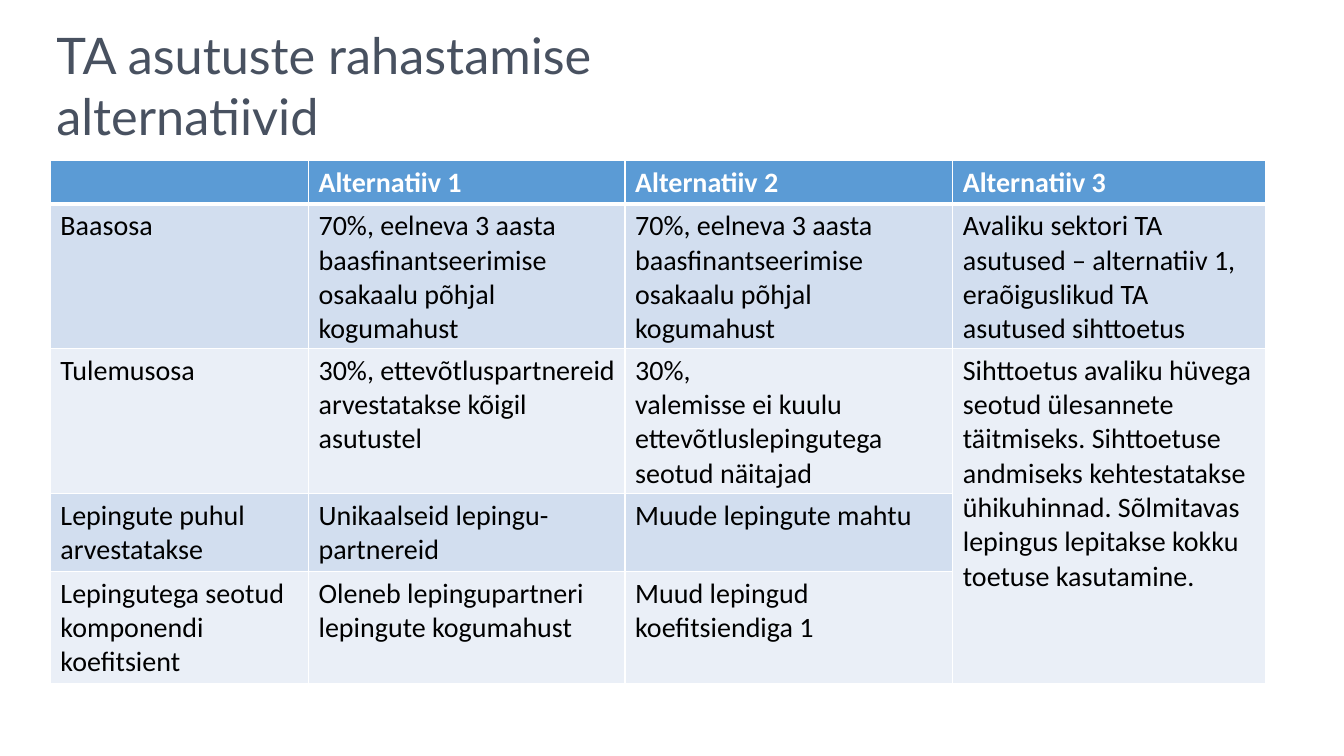
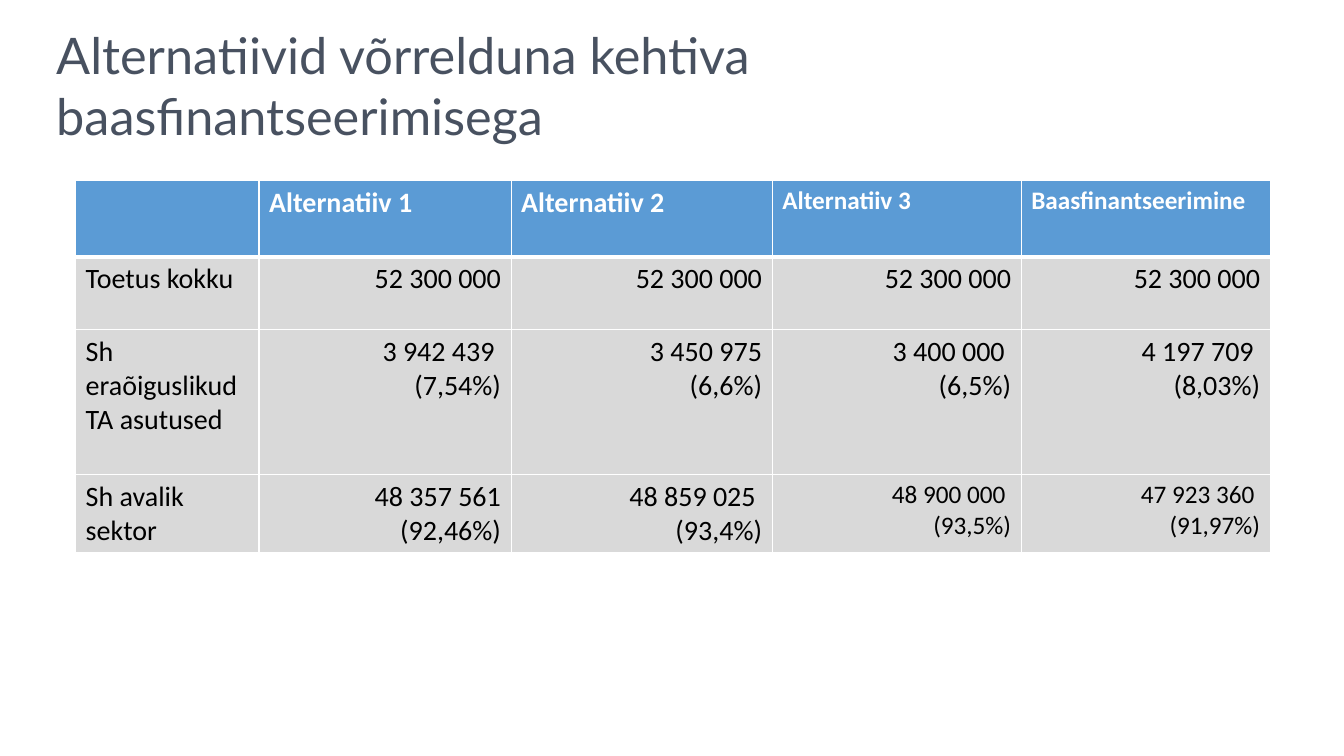
"""Build two slides that compare the funding alternatives of research institutions."""
from dataclasses import dataclass

from lxml.etree import SubElement
from pptx import Presentation
from pptx.dml.color import RGBColor
from pptx.enum.text import MSO_AUTO_SIZE as AutoSize, PP_ALIGN as Align
from pptx.oxml.ns import qn
from pptx.util import Inches, Pt


@dataclass(frozen=True)
class Theme:
    title_font: str = "Lato"
    table_font: str = "Calibri"
    title_color: str = "485160"
    header_fill: str = "5B9BD5"
    header_text: str = "FFFFFF"
    body_text: str = "000000"
    border: str = "FFFFFF"
    title_size: int = 36
    table_size: int = 20
    small_size: int = 18
    thin: int = 1
    thick: int = 3


THEME = Theme()

BASE_SHARE = "70%, eelneva 3 aasta baasfinantseerimise osakaalu põhjal kogumahust"
TOTAL = "52 300 000"

SLIDES = [
    {
        "title": "TA asutuste rahastamise alternatiivid",
        "title_width": 6.75,
        "origin": (0.5, 1.59),
        "columns": [2.56, 3.14, 3.25, 3.1],
        "heights": [0.42, 1.43, 1.44, 0.77, 1.11],
        "bands": ["D2DEEF", "EAEFF7"],
        "number_align": Align.LEFT,
        "small_cells": [],
        "merges": [((2, 3), (4, 3))],
        "rows": [
            ["", "Alternatiiv 1", "Alternatiiv 2", "Alternatiiv 3"],
            ["Baasosa", BASE_SHARE, BASE_SHARE,
             "Avaliku sektori TA asutused – alternatiiv 1, eraõiguslikud TA asutused sihttoetus"],
            ["Tulemusosa", "30%, ettevõtluspartnereid arvestatakse kõigil asutustel",
             "30%,\nvalemisse ei kuulu ettevõtluslepingutega seotud näitajad",
             "Sihttoetus avaliku hüvega seotud ülesannete täitmiseks. Sihttoetuse andmiseks "
             "kehtestatakse ühikuhinnad. Sõlmitavas lepingus lepitakse kokku toetuse kasutamine."],
            ["Lepingute puhul arvestatakse", "Unikaalseid lepingu-partnereid",
             "Muude lepingute mahtu", ""],
            ["Lepingutega seotud komponendi koefitsient",
             "Oleneb lepingupartneri lepingute kogumahust",
             "Muud lepingud koefitsiendiga 1", ""],
        ],
    },
    {
        "title": "Alternatiivid võrrelduna kehtiva baasfinantseerimisega",
        "title_width": 7.4,
        "origin": (0.75, 1.79),
        "columns": [1.82, 2.5, 2.59, 2.47, 2.47],
        "heights": [0.76, 0.72, 1.44, 0.77],
        "bands": ["D9D9D9"],
        "number_align": Align.RIGHT,
        "small_cells": [(0, 3), (0, 4), (3, 3), (3, 4)],
        "merges": [],
        "rows": [
            ["", "Alternatiiv 1", "Alternatiiv 2", "Alternatiiv 3", "Baasfinantseerimine"],
            ["Toetus kokku", TOTAL, TOTAL, TOTAL, TOTAL],
            ["Sh eraõiguslikud TA asutused", "3 942 439 \n(7,54%)", "3 450 975\n(6,6%)",
             "3 400 000 \n(6,5%)", "4 197 709 \n(8,03%)"],
            ["Sh avalik sektor", "48 357 561 (92,46%)", "48 859 025 \n(93,4%)",
             "48 900 000 \n(93,5%)", "47 923 360 \n(91,97%)"],
        ],
    },
]


def style_text(text_frame, font_name, size, color, bold=False, align=Align.LEFT):
    for paragraph in text_frame.paragraphs:
        paragraph.alignment = align
        for run in paragraph.runs:
            run.font.name = font_name
            run.font.size = Pt(size)
            run.font.bold = bold
            run.font.color.rgb = RGBColor.from_string(color)


def add_title(slide, text, width):
    box = slide.shapes.add_textbox(Inches(0.46), Inches(0.19), Inches(width), Inches(1.31))
    text_frame = box.text_frame
    text_frame.word_wrap = True
    text_frame.auto_size = AutoSize.SHAPE_TO_FIT_TEXT
    text_frame.text = text
    style_text(text_frame, THEME.title_font, THEME.title_size, THEME.title_color)


def add_borders(cell, row_index):
    top = THEME.thick if row_index == 1 else THEME.thin
    bottom = THEME.thick if row_index == 0 else THEME.thin
    properties = cell._tc.get_or_add_tcPr()
    for side, width in (("L", THEME.thin), ("R", THEME.thin), ("T", top), ("B", bottom)):
        line = SubElement(properties, qn(f"a:ln{side}"), w=str(Pt(width)))
        fill = SubElement(line, qn("a:solidFill"))
        SubElement(fill, qn("a:srgbClr"), val=THEME.border)


def fill_cell(cell, text, row_index, column_index, content):
    is_header = row_index == 0
    is_number = not is_header and column_index > 0
    bands = content["bands"]
    add_borders(cell, row_index)
    cell.fill.solid()
    cell.fill.fore_color.rgb = RGBColor.from_string(
        THEME.header_fill if is_header else bands[(row_index - 1) % len(bands)])
    cell.text_frame.text = text
    small = (row_index, column_index) in content["small_cells"]
    style_text(cell.text_frame, THEME.table_font,
               THEME.small_size if small else THEME.table_size,
               THEME.header_text if is_header else THEME.body_text,
               bold=is_header,
               align=content["number_align"] if is_number else Align.LEFT)


def add_comparison(slide, content):
    rows, columns, heights = content["rows"], content["columns"], content["heights"]
    left, top = content["origin"]
    frame = slide.shapes.add_table(len(rows), len(columns), Inches(left), Inches(top),
                                   Inches(sum(columns)), Inches(sum(heights)))
    table = frame.table
    for column, width in zip(table.columns, columns):
        column.width = Inches(width)
    for row, height in zip(table.rows, heights):
        row.height = Inches(height)
    for row_index, texts in enumerate(rows):
        for column_index, text in enumerate(texts):
            fill_cell(table.cell(row_index, column_index), text, row_index, column_index, content)
    for first, last in content["merges"]:
        table.cell(*first).merge(table.cell(*last))


def main():
    presentation = Presentation()
    presentation.slide_width = Inches(13.33)
    presentation.slide_height = Inches(7.5)
    for content in SLIDES:
        slide = presentation.slides.add_slide(presentation.slide_layouts[6])
        add_title(slide, content["title"], content["title_width"])
        add_comparison(slide, content)
    presentation.save("out.pptx")


if __name__ == "__main__":
    main()
